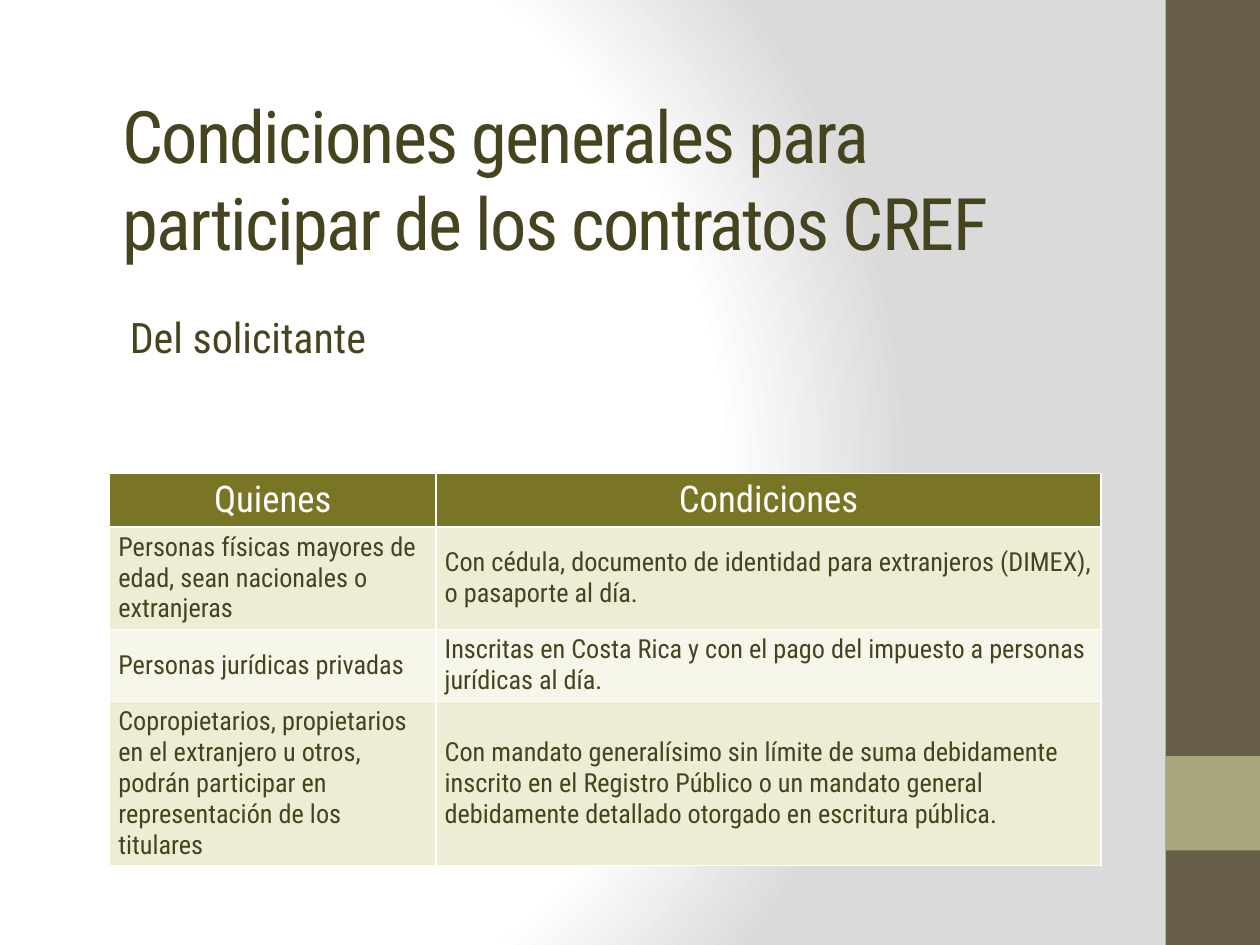
from pptx import Presentation
from pptx.dml.color import RGBColor
from pptx.enum.shapes import MSO_SHAPE
from pptx.enum.text import MSO_ANCHOR, PP_ALIGN
from pptx.oxml import parse_xml
from pptx.oxml.ns import nsdecls
from pptx.util import Inches, Pt

RECTANGLE = MSO_SHAPE.RECTANGLE
MIDDLE, BOTTOM = MSO_ANCHOR.MIDDLE, MSO_ANCHOR.BOTTOM
LEFT, CENTER = PP_ALIGN.LEFT, PP_ALIGN.CENTER
TITLE_ONLY = 5

THEME = {
    "font": "Roboto Condensed",
    "text": "46431F",
    "white": "FFFFFF",
    "header": "7A7425",
    "bands": ("EEECD4", "F7F6EB"),
    "sidebar": "675E47",
    "accent": "A9A57C",
    "glow": "DADADA",
    "title_size": 41.4,
    "subtitle_size": 24,
    "header_size": 21,
    "body_size": 15,
}

TITLE = "Condiciones generales para participar de los contratos CREF"
SUBTITLE = "Del solicitante"
ROWS = [
    ("Quienes", "Condiciones"),
    ("Personas físicas mayores de edad, sean nacionales o extranjeras",
     "Con cédula, documento de identidad para extranjeros (DIMEX), "
     "o pasaporte al día."),
    ("Personas jurídicas privadas",
     "Inscritas en Costa Rica y con el pago del impuesto a personas "
     "jurídicas al día."),
    ("Copropietarios, propietarios en el extranjero u otros, podrán "
     "participar en representación de los titulares",
     "Con mandato generalísimo sin límite de suma debidamente inscrito en "
     "el Registro Público o un mandato general debidamente detallado "
     "otorgado en escritura pública."),
]
COLUMN_WIDTHS = (2.59, 5.28)
ROW_HEIGHTS = (0.41, 0.81, 0.56, 1.3)
SIDEBAR_PARTS = [("sidebar", 0, 7.5), ("accent", 6, 0.75)]


def box(left, top, width, height):
    return [Inches(value) for value in (left, top, width, height)]


def rgb(name):
    return RGBColor.from_string(THEME[name])


def format_text(paragraph, size, color, align=LEFT):
    paragraph.alignment = align
    for run in paragraph.runs:
        run.font.name = THEME["font"]
        run.font.size = Pt(THEME[size])
        run.font.color.rgb = rgb(color)


def set_insets(target):
    target.margin_left = target.margin_right = Inches(0.07)
    target.margin_top = target.margin_bottom = Inches(0.04)


def add_background(slide):
    """Radial gradient, white at its focus and grey at the right."""
    stops = "".join(
        f'<a:gs pos="{position * 1000}"><a:srgbClr val="{THEME[color]}"/></a:gs>'
        for position, color in ((0, "white"), (75, "white"), (100, "glow")))
    background = parse_xml(
        f'<p:bg {nsdecls("p", "a")}><p:bgPr><a:gradFill rotWithShape="1">'
        f'<a:gsLst>{stops}</a:gsLst><a:path path="circle">'
        '<a:fillToRect l="20000" t="50000" r="100000" b="50000"/></a:path>'
        '</a:gradFill><a:effectLst/></p:bgPr></p:bg>')
    slide.element.cSld.insert(0, background)


def add_sidebar(slide):
    for color, top, height in SIDEBAR_PARTS:
        bar = slide.shapes.add_shape(RECTANGLE, *box(9.25, top, 0.75, height))
        bar.shadow.inherit = False
        bar.fill.solid()
        bar.fill.fore_color.rgb = rgb(color)
        bar.line.fill.background()


def add_borders(cell):
    properties = cell._tc.get_or_add_tcPr()
    for index, side in enumerate(("lnL", "lnR", "lnT", "lnB")):
        properties.insert(index, parse_xml(
            f'<a:{side} {nsdecls("a")} w="{Pt(1)}"><a:solidFill>'
            f'<a:srgbClr val="{THEME["white"]}"/></a:solidFill></a:{side}>'))


def add_conditions(slide):
    table = slide.shapes.add_table(
        len(ROWS), len(COLUMN_WIDTHS),
        *box(0.87, 3.76, sum(COLUMN_WIDTHS), sum(ROW_HEIGHTS))).table
    for column, width in zip(table.columns, COLUMN_WIDTHS):
        column.width = Inches(width)
    for row, height in zip(table.rows, ROW_HEIGHTS):
        row.height = Inches(height)
    for row_index, texts in enumerate(ROWS):
        is_header = row_index == 0
        fill = THEME["header"] if is_header else THEME["bands"][(row_index - 1) % 2]
        style = (("header_size", "white", CENTER) if is_header
                 else ("body_size", "text", LEFT))
        for column_index, text in enumerate(texts):
            cell = table.cell(row_index, column_index)
            cell.text_frame.text = text
            cell.vertical_anchor = MIDDLE
            set_insets(cell)
            cell.fill.solid()
            cell.fill.fore_color.rgb = RGBColor.from_string(fill)
            add_borders(cell)
            paragraph = cell.text_frame.paragraphs[0]
            format_text(paragraph, *style)
            for run in paragraph.runs:
                run.font.bold = False


def add_title(slide):
    title = slide.shapes.title
    title.left, title.top, title.width, title.height = box(0.87, 1.19, 8.25, 0.45)
    frame = title.text_frame
    frame.text = TITLE
    frame.word_wrap = True
    frame.vertical_anchor = MIDDLE
    frame.margin_right = Inches(0.5)
    paragraph = frame.paragraphs[0]
    paragraph.line_spacing = 1.0
    format_text(paragraph, "title_size", "text")
    paragraph.runs[0].font._element.set("spc", "-100")


def add_subtitle(slide):
    frame = slide.shapes.add_textbox(*box(0.96, 2.47, 8.25, 0.45)).text_frame
    frame.text = SUBTITLE
    frame.word_wrap = True
    frame.vertical_anchor = BOTTOM
    set_insets(frame)
    frame.paragraphs[0].line_spacing = 0.9
    format_text(frame.paragraphs[0], "subtitle_size", "text")


def main():
    presentation = Presentation()
    presentation.slide_width, presentation.slide_height = Inches(10), Inches(7.5)
    slide = presentation.slides.add_slide(presentation.slide_layouts[TITLE_ONLY])
    add_background(slide)
    add_sidebar(slide)
    add_conditions(slide)
    add_title(slide)
    add_subtitle(slide)
    presentation.save("out.pptx")


if __name__ == "__main__":
    main()
